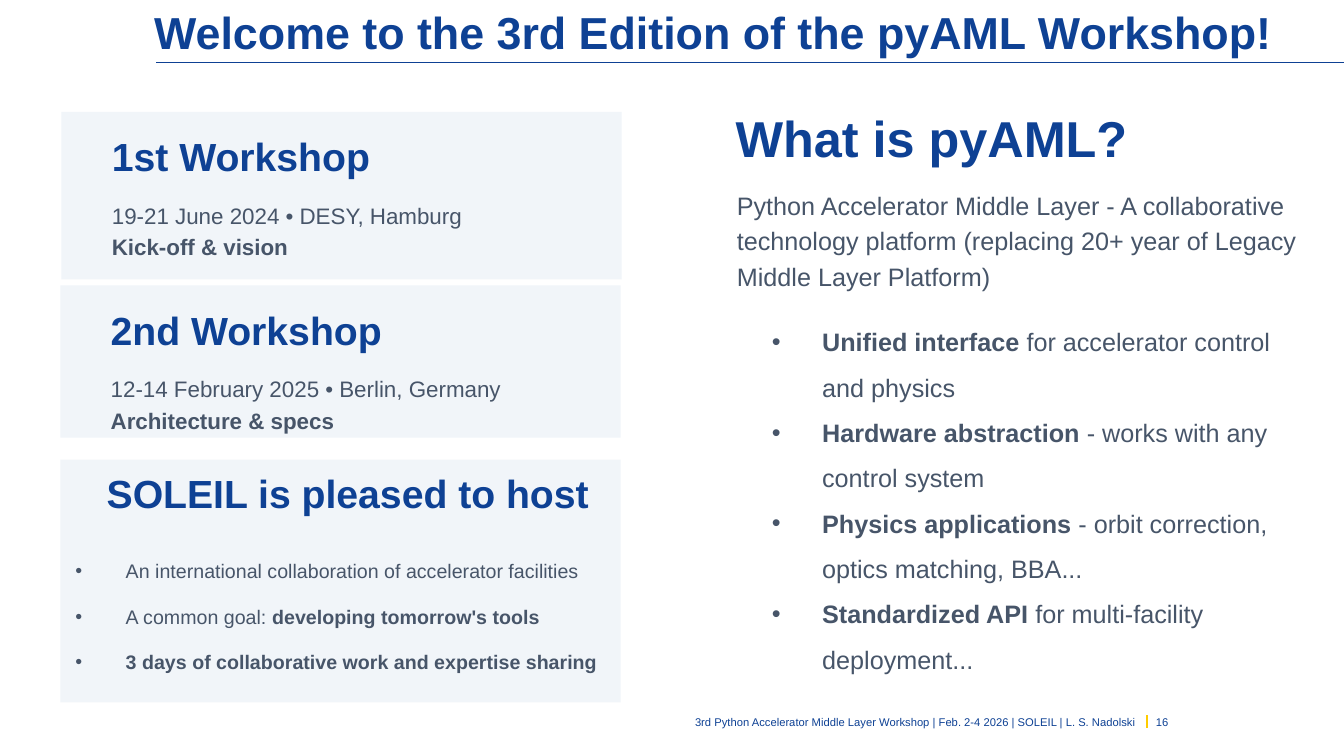
from lxml.etree import SubElement
from pptx import Presentation
from pptx.dml.color import RGBColor
from pptx.enum.shapes import MSO_CONNECTOR, MSO_SHAPE
from pptx.enum.text import MSO_ANCHOR, PP_ALIGN
from pptx.oxml.ns import qn
from pptx.util import Cm, Pt

BLUE = RGBColor(0x0E, 0x41, 0x94)
SLATE = RGBColor(0x47, 0x55, 0x69)
PALE = RGBColor(0xF1, 0xF5, 0xF9)
GOLD = RGBColor(0xFF, 0xCC, 0x00)
WIDTH, HEIGHT = 33.87, 19.05
INDENT = 1.27


def add_runs(para, text):
    """Add runs to a paragraph: asterisks enclose bold, newlines break lines."""
    for i, part in enumerate(text.split("*")):
        for j, line in enumerate(part.split("\n")):
            if j:
                para.add_line_break()
            if line:
                run = para.add_run()
                run.text = line
                if i % 2:
                    run.font.bold = True


def add_text(slide, box, lines, size, color, space=None, bold=None,
             bullet=False, align=PP_ALIGN.LEFT):
    """Place a text box without insets, one paragraph per line."""
    frame = slide.shapes.add_textbox(*map(Cm, box)).text_frame
    frame.word_wrap = True
    frame.margin_left = frame.margin_right = 0
    frame.margin_top = frame.margin_bottom = 0
    for i, line in enumerate(lines):
        para = frame.paragraphs[0] if i == 0 else frame.add_paragraph()
        if bullet:
            props = para._p.get_or_add_pPr()
            props.set("marL", str(Cm(INDENT)))
            props.set("indent", str(-Cm(INDENT)))
            SubElement(props, qn("a:buFont")).set("typeface", "Arial")
            SubElement(props, qn("a:buChar")).set("char", "•")
        para.alignment = align
        if space:
            para.line_spacing = Pt(space)
        font = para.font
        font.name, font.size, font.bold = "Arial", Pt(size), bold
        font.color.rgb = color
        add_runs(para, line)
    return frame


def add_line(slide, ends, color, weight):
    """Draw a straight line without a shadow."""
    line = slide.shapes.add_connector(MSO_CONNECTOR.STRAIGHT, *map(Cm, ends))
    line.line.color.rgb = color
    line.line.width = Pt(weight)
    SubElement(line._element.spPr, qn("a:effectLst"))


def add_panel(slide, box):
    """Draw a pale panel."""
    panel = slide.shapes.add_shape(MSO_SHAPE.RECTANGLE, *map(Cm, box))
    panel.shadow.inherit = False
    panel.fill.solid()
    panel.fill.fore_color.rgb = PALE
    panel.line.fill.background()


def add_header(slide, box, title):
    """Place the title with the rule beneath it."""
    x, y, w, h = box
    add_line(slide, (x + 2.42, y + h, WIDTH, y + h), BLUE, 0.75)
    frame = add_text(slide, (x, y, w - 0.25, h), [title], 32, BLUE,
                     bold=True, align=PP_ALIGN.RIGHT)
    frame.vertical_anchor = MSO_ANCHOR.MIDDLE


def add_card(slide, box, title, body):
    """Place a card for a past workshop."""
    x, y, w, h = box
    add_panel(slide, box)
    add_text(slide, (x + 1.27, y + 0.52, w - 0.92, 1.19), [title], 28, BLUE,
             33.6, bold=True)
    add_text(slide, (x + 1.27, y + 2.16, w - 1.17, 1.57), [body], 16, SLATE,
             22.4)


def add_host(slide, box, title, points):
    """Place the panel of the hosting site."""
    x, y, w, h = box
    add_panel(slide, box)
    add_text(slide, (x + 1.17, y - 0.08, w - 0.96, 0.89), [title], 28, BLUE,
             43.2, bold=True)
    add_text(slide, (x + 0.38, y + 1.96, w - 0.6, 4.27), points, 14, SLATE,
             32.4, bullet=True)


def add_about(slide, box, title, intro, points):
    """Place the column that explains the project."""
    x, y, w, h = box
    add_text(slide, (x, y, w, 1.52), [title], 36, BLUE, 43.2, bold=True)
    add_text(slide, (x + 0.03, y + 1.98, w - 0.28, 1.78), [intro], 18, SLATE,
             25.2)
    add_text(slide, (x + 0.91, y + 5.16, w - 1.42, h - 5.16), points, 18,
             SLATE, 32.4, bullet=True)


def add_footer(slide, box, note, page):
    """Place the footer note, the gold tick and the page number."""
    x, y, w, h = box
    split = x + w - 1.19
    add_line(slide, (split + 0.03, y + 0.33, split + 0.03, y + 0.64), GOLD, 1.5)
    left = add_text(slide, (x, y, split - x - 0.25, h), [note], 8, BLUE,
                    align=PP_ALIGN.RIGHT)
    right = add_text(slide, (split + 0.25, y, 0.94, h), [page], 8, BLUE)
    left.vertical_anchor = right.vertical_anchor = MSO_ANCHOR.MIDDLE


def main():
    """Build the welcome slide."""
    deck = Presentation()
    deck.slide_width, deck.slide_height = Cm(WIDTH), Cm(HEIGHT)
    slide = deck.slides.add_slide(deck.slide_layouts[6])
    add_header(slide, (1.52, 0, 30.81, 1.57),
               "Welcome to the 3rd Edition of the pyAML Workshop!")
    add_card(slide, (1.55, 2.82, 14.12, 4.22), "1st Workshop",
             "19-21 June 2024 • DESY, Hamburg\n*Kick-off & vision*")
    add_card(slide, (1.52, 7.19, 14.12, 3.84), "2nd Workshop",
             "12-14 February 2025 • Berlin, Germany\n*Architecture & specs*")
    add_host(slide, (1.52, 11.58, 14.12, 6.12), "SOLEIL is pleased to host", [
        "An international collaboration of accelerator facilities",
        "A common goal: *developing tomorrow's tools*",
        "*3 days of collaborative work and expertise sharing*",
    ])
    add_about(slide, (18.54, 2.69, 14.4, 14.69), "What is pyAML?",
              "Python Accelerator Middle Layer - A collaborative technology "
              "platform (replacing 20+ year of Legacy Middle Layer Platform)", [
                  "*Unified interface* for accelerator control and physics",
                  "*Hardware abstraction* - works with any control system",
                  "*Physics applications* - orbit correction, "
                  "optics matching, BBA...",
                  "*Standardized API* for multi-facility deployment...",
              ])
    add_footer(slide, (2.06, 17.7, 28.01, 0.99),
               "3rd Python Accelerator Middle Layer Workshop | "
               "Feb. 2-4 2026 | SOLEIL | L. S. Nadolski", "16")
    deck.save("out.pptx")


if __name__ == "__main__":
    main()
